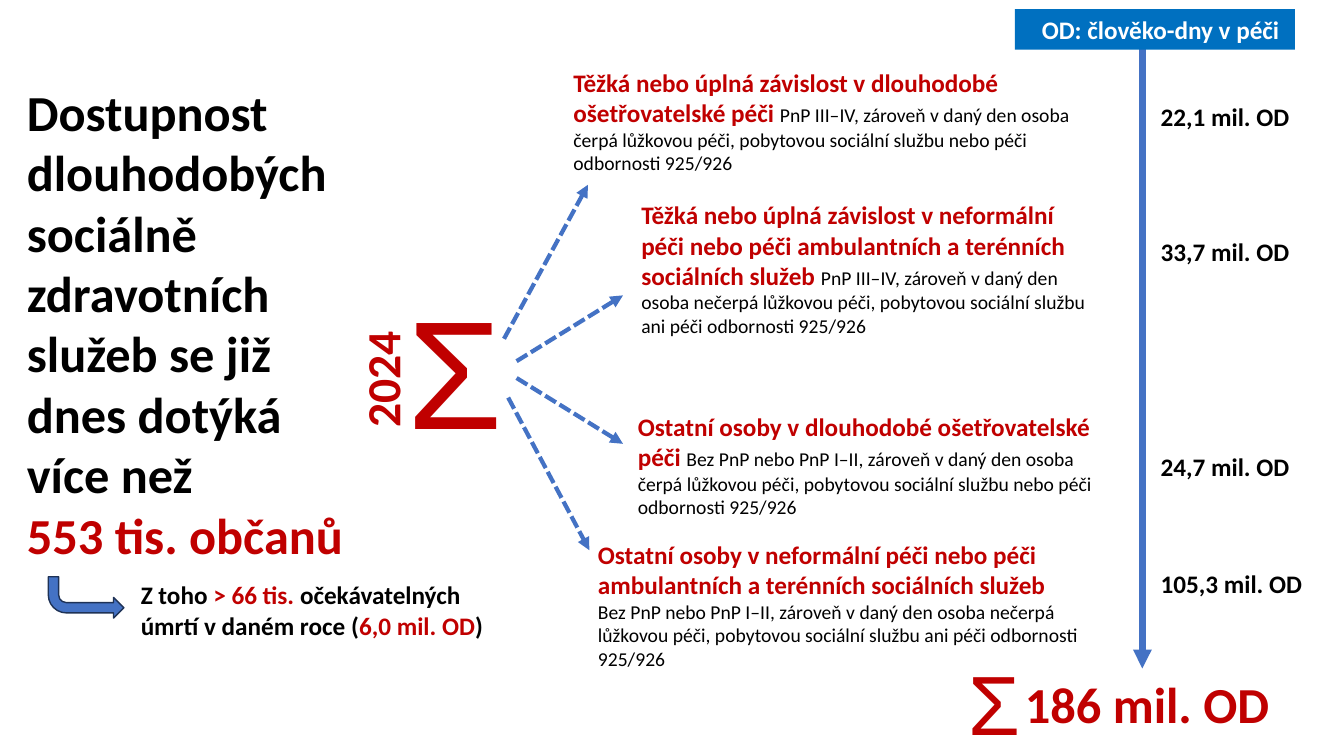
"""Build the slide on access to long-term social and health care."""
from dataclasses import dataclass

from lxml import etree
from pptx import Presentation
from pptx.dml.color import RGBColor
from pptx.enum.dml import MSO_LINE
from pptx.enum.shapes import MSO_CONNECTOR, MSO_SHAPE
from pptx.enum.text import MSO_ANCHOR, MSO_AUTO_SIZE, PP_ALIGN
from pptx.oxml.ns import qn
from pptx.util import Pt

LEFT, CENTER, RIGHT = PP_ALIGN.LEFT, PP_ALIGN.CENTER, PP_ALIGN.RIGHT
TOP = MSO_ANCHOR.TOP
MIDDLE = MSO_ANCHOR.MIDDLE
GROW = MSO_AUTO_SIZE.SHAPE_TO_FIT_TEXT
DASH = MSO_LINE.SQUARE_DOT
STRAIGHT = MSO_CONNECTOR.STRAIGHT
RECT, BENT = MSO_SHAPE.RECTANGLE, MSO_SHAPE.BENT_ARROW
BREAK = "\n"


@dataclass(frozen=True)
class Theme:
    """Colours, fonts and type sizes."""
    red: str = "C00000"
    black: str = "000000"
    white: str = "FFFFFF"
    blue: str = "4472C4"
    navy: str = "1E3256"
    label: str = "0070C0"
    font: str = "Calibri"
    sign: str = "Arial"
    big: int = 36
    year: int = 34
    head: int = 18
    note: int = 14


class Board:
    """Draws styled elements on one slide."""

    def __init__(self, slide, theme):
        """Keep the slide and its theme."""
        self.slide = slide
        self.theme = theme

    def run(self, text, size, color, bold=True, font=None):
        """Describe one run of text."""
        return text, size, color, bold, font or self.theme.font

    def fill(self, shape, paras, align=LEFT, anchor=TOP):
        """Write paragraphs of runs into a shape."""
        frame = shape.text_frame
        frame.word_wrap = True
        frame.auto_size = GROW
        frame.vertical_anchor = anchor
        for index, runs in enumerate(paras):
            para = frame.add_paragraph() if index else frame.paragraphs[0]
            para.alignment = align
            for part in runs:
                if part == BREAK:
                    para.add_line_break()
                    continue
                text, size, color, bold, name = part
                run = para.add_run()
                run.text = text
                font = run.font
                font.name, font.size, font.bold = name, Pt(size), bold
                font.color.rgb = RGBColor.from_string(color)

    def title(self, box, paras):
        """Place and write the title."""
        shape = self.slide.shapes.title
        shape.left, shape.top, shape.width, shape.height = map(Pt, box)
        self.fill(shape, paras)

    def text(self, box, runs, align=LEFT, turn=0):
        """Add a text box with one paragraph."""
        shape = self.slide.shapes.add_textbox(*map(Pt, box))
        shape.rotation = turn
        self.fill(shape, [runs], align)

    def shape(self, kind, box, color, edge=None):
        """Add a filled preset shape."""
        shape = self.slide.shapes.add_shape(kind, *map(Pt, box))
        shape.shadow.inherit = False
        shape.fill.solid()
        shape.fill.fore_color.rgb = RGBColor.from_string(color)
        if edge:
            shape.line.color.rgb = RGBColor.from_string(edge)
            shape.line.width = Pt(1)
        else:
            shape.line.fill.background()
        return shape

    def arrow(self, ends, width, dash=None):
        """Add a straight arrow."""
        link = self.slide.shapes.add_connector(STRAIGHT, *map(Pt, ends))
        line = link.line
        line.color.rgb = RGBColor.from_string(self.theme.blue)
        line.width = Pt(width)
        if dash:
            line.dash_style = dash
        tip = etree.SubElement(line._get_or_add_ln(), qn("a:tailEnd"))
        tip.set("type", "triangle")
        etree.SubElement(link.element.spPr, qn("a:effectLst"))


def main():
    """Build and save the slide."""
    deck = Presentation()
    deck.slide_width, deck.slide_height = Pt(960), Pt(540)
    look = Theme()
    board = Board(deck.slides.add_slide(deck.slide_layouts[5]), look)
    run = board.run
    red, black = look.red, look.black

    board.title((12, 54, 257, 356), [
        [run("Dostupnost dlouhodobých sociálně zdravotních služeb "
             "se již dnes dotýká více než", look.big, black)],
        [run("553 tis. občanů", look.big, red)],
    ])

    for box, size in (((284, 193, 146, 140), 110),
                      ((684.5, 462, 146, 80), 60)):
        board.text(box, [run("Σ", size, red, False, look.sign)])
    board.text((212.5, 247, 120, 48), [run("2024", look.year, red)],
               CENTER, 270)
    board.text((725, 477.5, 228, 51), [run("186 mil. OD", look.big, red)])

    for ends in ((360, 242, 420, 132), (369, 258, 445, 211),
                 (369, 270, 445, 317), (363, 284, 421, 393)):
        board.arrow(ends, 3, DASH)

    groups = (
        ((402.5, 44.5, 383, 85),
         "Těžká nebo úplná závislost v dlouhodobé ošetřovatelské péči ",
         "PnP III–IV, zároveň v daný den osoba čerpá lůžkovou péči, "
         "pobytovou sociální službu nebo péči odbornosti 925/926"),
        ((451, 139, 343.5, 106.5),
         "Těžká nebo úplná závislost v neformální péči nebo péči "
         "ambulantních a terénních sociálních služeb ",
         "PnP III–IV, zároveň v daný den osoba nečerpá lůžkovou péči, "
         "pobytovou sociální službu ani péči odbornosti 925/926"),
        ((448.5, 290, 358.5, 85),
         "Ostatní osoby v dlouhodobé ošetřovatelské péči ",
         "Bez PnP nebo PnP I–II, zároveň v daný den osoba čerpá lůžkovou "
         "péči, pobytovou sociální službu nebo péči odbornosti 925/926"),
        ((420, 381.5, 383, 101.5),
         "Ostatní osoby v neformální péči nebo péči "
         "ambulantních a terénních sociálních služeb" + BREAK,
         "Bez PnP nebo PnP I–II, zároveň v daný den osoba nečerpá lůžkovou "
         "péči, pobytovou sociální službu ani péči odbornosti 925/926"),
    )
    for box, head, note in groups:
        gap = [BREAK] if head.endswith(BREAK) else []
        board.text(box, [run(head.rstrip(BREAK), look.head, red), *gap,
                         run(note, look.note, black, False)])

    bend = board.shape(BENT, (34.5, 412, 54, 29.5), look.blue, look.navy)
    bend.element.spPr.find(qn("a:xfrm")).set("flipV", "1")
    parts = (("Z toho ", black), ("> 66 tis. ", red),
             ("očekávatelných úmrtí v daném roce (", black),
             ("6,0 mil. OD", red), (")", black))
    board.text((93.5, 410.5, 269, 51),
               [run(text, look.head, color) for text, color in parts])

    board.arrow((816, 32.5, 816, 477.5), 4.5)
    label = board.shape(RECT, (725, 6.5, 200, 29), look.label)
    board.fill(label, [[run("OD: člověko-dny v péči ", look.head,
                            look.white)]], RIGHT, MIDDLE)
    for top, days in ((69, "22,1"), (165.5, "33,7"),
                      (319, "24,7"), (402.5, "105,3")):
        board.text((822, top, 129, 29),
                   [run(f"{days} mil. OD", look.head, black)])

    deck.save("out.pptx")


if __name__ == "__main__":
    main()
